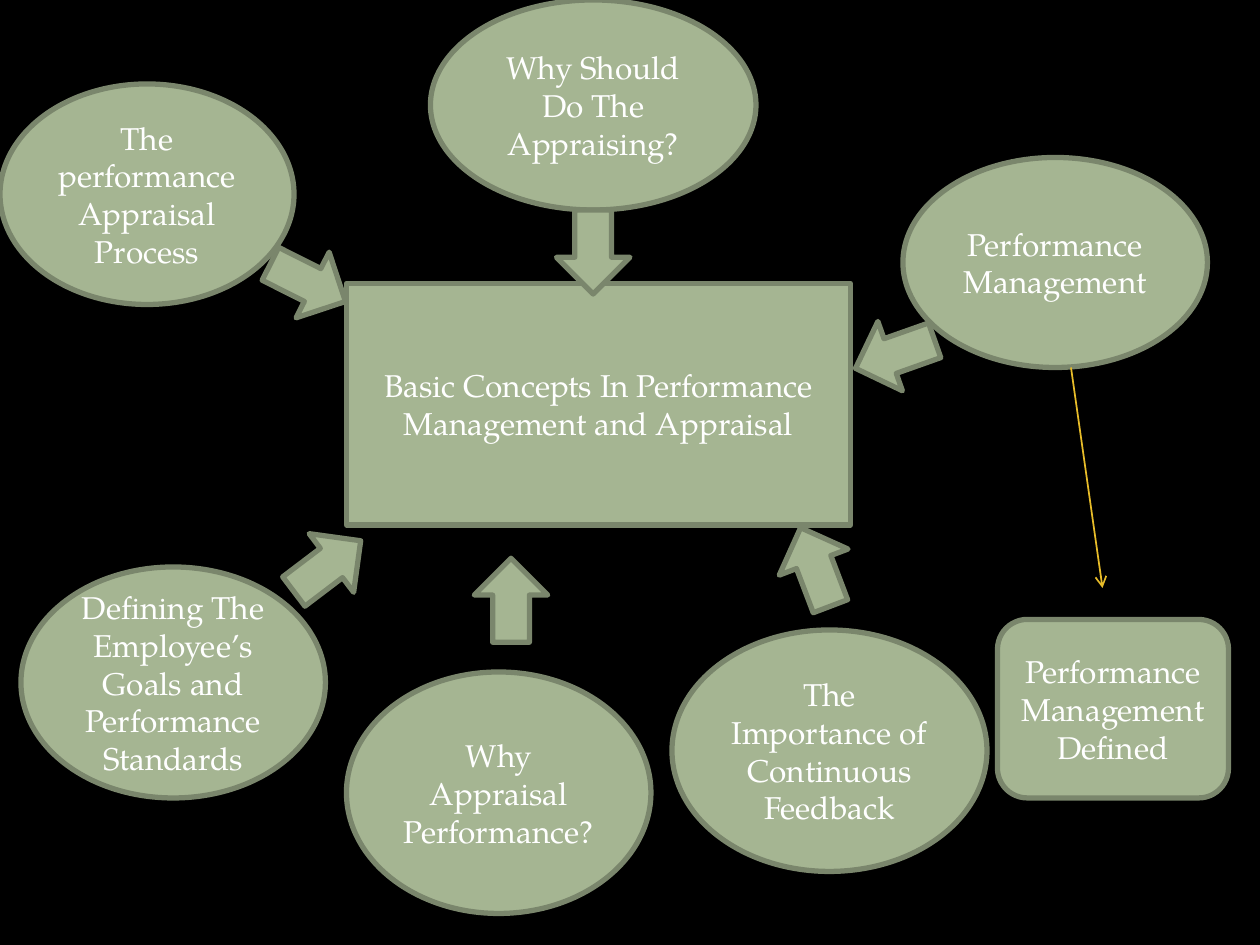
"""Build a slide that links appraisal topics to a central concept."""
import lxml.etree
import pptx
import pptx.dml.color
import pptx.enum.shapes
import pptx.enum.text
import pptx.oxml.ns
import pptx.util

Pt = pptx.util.Pt
RGBColor = pptx.dml.color.RGBColor
Shape = pptx.enum.shapes.MSO_SHAPE

BLACK = RGBColor(0x00, 0x00, 0x00)
WHITE = RGBColor(0xFF, 0xFF, 0xFF)
SAGE = RGBColor(0xA5, 0xB5, 0x92)
MOSS = RGBColor(0x7A, 0x86, 0x6C)
GOLD = RGBColor(0xE7, 0xBC, 0x29)

TOPICS = [
    ("The performance Appraisal Process", 0, 48, 168, 126),
    ("Why Appraisal Performance?", 198, 384, 174, 138),
    ("The Importance of Continuous Feedback", 384, 360, 180, 138),
    ("Performance Management", 516, 90, 174, 120),
    ("Defining The Employee’s Goals and Performance Standards", 12, 324, 174, 132),
    ("Why Should Do The Appraising?", 246, 0, 186, 120),
]
ARROWS = [
    (487.5, 181.5, 340.5),
    (442, 303, 69.2),
    (268, 322, 90),
    (152, 140.5, 206.7),
    (163, 302.5, 142.8),
    (315, 123, 270),
]


def write_text(shape, text, font="TeX Gyre Pagella", size=18, colour=WHITE):
    """Put centred, wrapped text into a shape."""
    frame = shape.text_frame
    frame.word_wrap = True
    frame.vertical_anchor = pptx.enum.text.MSO_ANCHOR.MIDDLE
    paragraph = frame.paragraphs[0]
    paragraph.alignment = pptx.enum.text.PP_ALIGN.CENTER
    run = paragraph.add_run()
    run.text = text
    run.font.name = font
    run.font.size = Pt(size)
    run.font.color.rgb = colour


class Diagram:
    """Hold the style and the current slide."""

    fill = SAGE
    outline = MOSS
    outline_width = 3
    arrow_size = (48, 42)

    def __init__(self, slide):
        self.slide = slide
        slide.background.fill.solid()
        slide.background.fill.fore_color.rgb = BLACK

    def node(self, kind, left, top, width, height, text=None):
        """Add a filled and outlined shape."""
        shape = self.slide.shapes.add_shape(kind, Pt(left), Pt(top), Pt(width), Pt(height))
        shape.shadow.inherit = False
        shape.fill.solid()
        shape.fill.fore_color.rgb = self.fill
        shape.line.color.rgb = self.outline
        shape.line.width = Pt(self.outline_width)
        if text:
            write_text(shape, text)
        return shape

    def block_arrow(self, left, top, rotation):
        """Add a rotated block arrow."""
        shape = self.node(Shape.LEFT_ARROW, left, top, *self.arrow_size)
        shape.rotation = rotation

    def thin_arrow(self, start, end):
        """Add a thin line with an open arrowhead at its end."""
        connector = self.slide.shapes.add_connector(
            pptx.enum.shapes.MSO_CONNECTOR.STRAIGHT, *map(Pt, start + end)
        )
        connector.line.color.rgb = GOLD
        connector.line.width = Pt(1)
        qualified = pptx.oxml.ns.qn
        lxml.etree.SubElement(connector.line._get_or_add_ln(), qualified("a:tailEnd"), type="arrow")
        lxml.etree.SubElement(connector._element.spPr, qualified("a:effectLst"))


def main():
    """Build and save the presentation."""
    presentation = pptx.Presentation()
    presentation.slide_width = Pt(720)
    presentation.slide_height = Pt(540)
    blank_layout = presentation.slide_layouts.get_by_name("Blank")
    diagram = Diagram(presentation.slides.add_slide(blank_layout))
    diagram.node(Shape.RECTANGLE, 198, 162, 288, 138,
                 "Basic Concepts In Performance Management and Appraisal")
    for text, *bounds in TOPICS:
        diagram.node(Shape.OVAL, *bounds, text)
    diagram.node(Shape.ROUNDED_RECTANGLE, 570, 354, 132, 102,
                 "Performance Management Defined")
    diagram.thin_arrow((612, 210), (630, 336))
    for arrow in ARROWS:
        diagram.block_arrow(*arrow)
    presentation.save("out.pptx")


if __name__ == "__main__":
    main()
